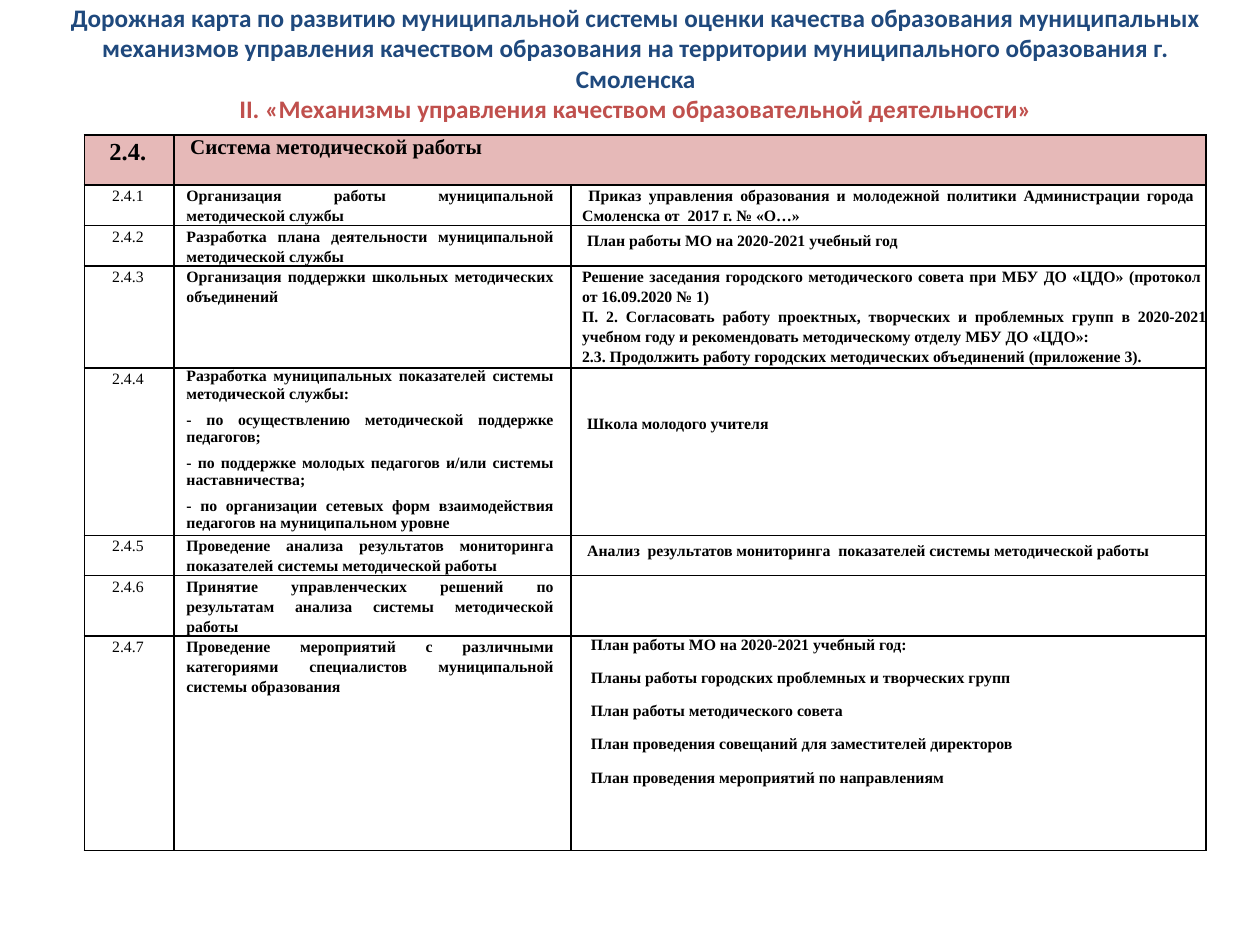
from lxml import etree
from pptx import Presentation
from pptx.dml.color import RGBColor
from pptx.enum import text
from pptx.oxml import ns
from pptx.util import Inches, Pt

COLORS = {"navy": "1F497D", "red": "C0504D", "pink": "E6B9B8", "white": "FFFFFF", "black": "000000"}
WIDTH, HEIGHT = 10, 7.5
COLUMNS = [0.71, 3.15, 5.04]
ROWS = [0.4, 0.32, 0.32, 0.81, 1.33, 0.32, 0.48, 1.7]
CENTER, JUSTIFY, LEFT = (text.PP_ALIGN.CENTER, text.PP_ALIGN.JUSTIFY, text.PP_ALIGN.LEFT)

TITLE = [
    ("Дорожная карта по развитию муниципальной системы оценки качества образования "
     "муниципальных механизмов управления качеством образования на территории "
     "муниципального образования г. Смоленска", "navy"),
    ("II. «Механизмы управления качеством образовательной деятельности»", "red"),
]

# Cell styles: alignment, indents, right margin, line spacing, space between paragraphs
HEADING = dict(align=CENTER, left=0.1, right=0.12, line=1.15, size=14)
NUMBER = dict(align=CENTER, left=0.1, right=0.12, line=Pt(11.4), bold=False)
TASK = dict(align=JUSTIFY, left=0.1, right=0.14, line=Pt(11.4))
TASK_LIST = dict(align=JUSTIFY, left=0.1, right=0.14, line=Pt(10), gap=4.6)
DECREE = dict(align=JUSTIFY, left=0.09, first=0.05, right=0.1, line=Pt(11.4))
DECISION = dict(align=JUSTIFY, left=0.09, line=Pt(11.4))
NOTE = dict(left=0.13, line=Pt(13.9))
PLANS = dict(left=0.16, gap=9)

# Each row: number, task style, task paragraphs, result style, result paragraphs, top margin
ITEMS = [
    ("2.4.1", TASK, ["Организация работы муниципальной методической службы"], DECREE,
     ["Приказ управления образования и молодежной политики Администрации города "
      "Смоленска от  2017 г. № «О…»"], 0),
    ("2.4.2", TASK, ["Разработка плана деятельности муниципальной методической службы"],
     NOTE, ["План работы МО на 2020-2021 учебный год"], 0),
    ("2.4.3", TASK, ["Организация поддержки школьных методических объединений"], DECISION,
     ["Решение заседания городского методического совета при МБУ ДО «ЦДО» (протокол  "
      "от 16.09.2020 № 1)",
      "П. 2. Согласовать работу проектных, творческих и проблемных групп в 2020-2021 "
      "учебном году и рекомендовать методическому отделу МБУ ДО «ЦДО»:",
      "2.3. Продолжить работу городских методических объединений (приложение 3)."], 0),
    ("2.4.4", TASK_LIST,
     ["Разработка муниципальных показателей системы методической службы:",
      "- по осуществлению методической поддержке педагогов;",
      "- по поддержке молодых педагогов и/или системы наставничества;",
      "- по организации сетевых форм взаимодействия педагогов на муниципальном уровне"],
     NOTE, ["Школа молодого учителя"], 0.32),
    ("2.4.5", TASK,
     ["Проведение анализа результатов мониторинга показателей системы методической работы"],
     NOTE, ["Анализ  результатов мониторинга  показателей системы методической работы"], 0),
    ("2.4.6", TASK,
     ["Принятие управленческих решений по результатам анализа системы методической работы"],
     NOTE, [], 0),
    ("2.4.7", TASK,
     ["Проведение мероприятий с различными категориями специалистов муниципальной "
      "системы образования"], PLANS,
     ["План работы МО на 2020-2021 учебный год:",
      "Планы работы городских проблемных и творческих групп",
      "План работы методического совета",
      "План проведения совещаний для заместителей директоров",
      "План проведения мероприятий по направлениям"], 0),
]


def format_span(span, size, name, color, bold=True):
    span.font.size, span.font.name, span.font.bold = Pt(size), name, bold
    span.font.color.rgb = RGBColor.from_string(COLORS[color])


def write(frame, lines, size=9, bold=True, align=LEFT, left=0, first=0, line=None, gap=0):
    """Fill a text frame with equally styled paragraphs."""
    frame.text = "\n".join(lines)
    for index, para in enumerate(frame.paragraphs):
        para.alignment, para.line_spacing = align, line
        para.space_before = Pt(gap if index else 0)
        properties = para._p.get_or_add_pPr()
        properties.set("marL", str(Inches(left)))
        properties.set("indent", str(Inches(first)))
        for span in para.runs:
            format_span(span, size, "Times New Roman", "black", bold)


def add_borders(cell):
    properties = cell._tc.get_or_add_tcPr()
    for side in ("lnL", "lnR", "lnT", "lnB"):
        edge = etree.SubElement(properties, ns.qn("a:" + side), w=str(Pt(1)))
        fill = etree.SubElement(edge, ns.qn("a:solidFill"))
        etree.SubElement(fill, ns.qn("a:srgbClr"), val=COLORS["black"])


def fill_cell(cell, lines, fill="white", top=0, right=0, **style):
    cell.margin_left = cell.margin_bottom = 0
    cell.margin_top, cell.margin_right = Inches(top), Inches(right)
    cell.fill.solid()
    cell.fill.fore_color.rgb = RGBColor.from_string(COLORS[fill])
    write(cell.text_frame, lines, **style)


def add_title(page, left, top, width, height):
    frame = page.shapes.add_textbox(*map(Inches, (left, top, width, height))).text_frame
    frame.word_wrap = True
    frame.margin_top = frame.margin_bottom = 0
    write(frame, [line for line, _ in TITLE], align=CENTER)
    for para, (_, color) in zip(frame.paragraphs, TITLE):
        format_span(para.runs[0], 14.4, "Calibri", color)


def add_roadmap(page, left, top):
    box = map(Inches, (left, top, sum(COLUMNS), sum(ROWS)))
    table = page.shapes.add_table(len(ROWS), len(COLUMNS), *box).table
    for column, width in zip(table.columns, COLUMNS):
        column.width = Inches(width)
    for row, height in zip(table.rows, ROWS):
        row.height = Inches(height)
    for cell in table.iter_cells():
        add_borders(cell)

    # Heading row
    table.cell(0, 1).merge(table.cell(0, 2))
    fill_cell(table.cell(0, 0), ["2.4."], "pink", **HEADING)
    fill_cell(table.cell(0, 1), ["Система методической работы"], "pink", size=12, **NOTE)

    # Numbered tasks with their results
    for index, (number, task_style, task, result_style, result, inset) in enumerate(ITEMS, 1):
        fill_cell(table.cell(index, 0), [number], **NUMBER)
        fill_cell(table.cell(index, 1), task, **task_style)
        fill_cell(table.cell(index, 2), result, top=inset, **result_style)


deck = Presentation()
deck.slide_width, deck.slide_height = Inches(WIDTH), Inches(HEIGHT)
page = deck.slides.add_slide(deck.slide_layouts[6])
add_title(page, 0.28, 0.02, 9.53, 0.97)
add_roadmap(page, 0.67, 1.07)
deck.save("out.pptx")
